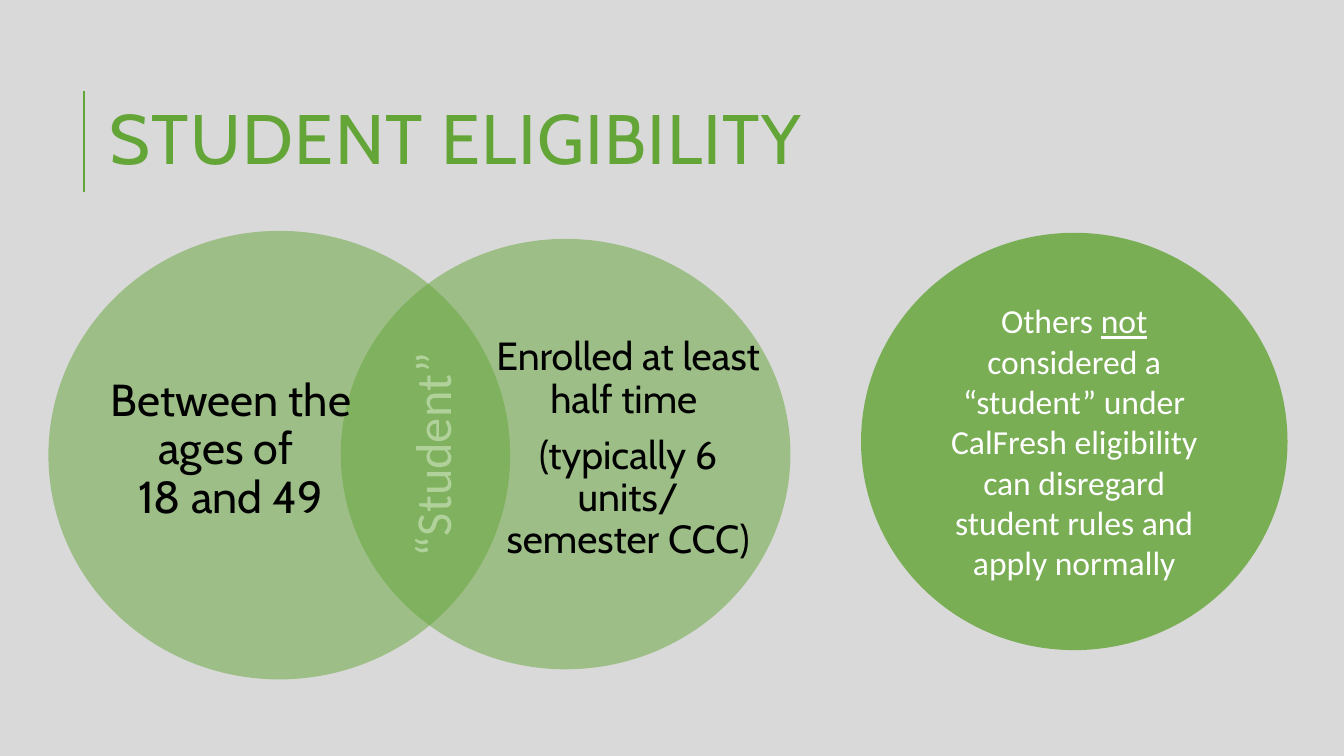
from lxml.etree import SubElement
from pptx import Presentation
from pptx.dml.color import RGBColor
from pptx.enum.shapes import MSO_CONNECTOR, MSO_SHAPE
from pptx.enum.text import MSO_ANCHOR as ANCHOR, PP_ALIGN as ALIGN
from pptx.oxml.ns import qn
from pptx.util import Inches, Pt

GREEN = RGBColor(0x63, 0xA5, 0x37)
GRAY = RGBColor(0xD9, 0xD9, 0xD9)
BLACK = RGBColor(0, 0, 0)
WHITE = RGBColor(0xFF, 0xFF, 0xFF)


class EligibilitySlide:
    heading_font = "Cabin"
    body_font = "Calibri"

    def __init__(self, prs):
        self.s = prs.slides.add_slide(prs.slide_layouts[6])
        fill = self.s.background.fill
        fill.solid()
        fill.fore_color.rgb = GRAY

    def rule(self, x, top, bottom):
        line = self.s.shapes.add_connector(
            MSO_CONNECTOR.STRAIGHT, Inches(x), Inches(bottom), Inches(x), Inches(top))
        line.line.color.rgb = GREEN
        line.line.width = Pt(1.5)
        SubElement(line._element.spPr, qn("a:effectLst"))

    def circle(self, box, opacity):
        sp = self.s.shapes.add_shape(MSO_SHAPE.OVAL, *map(Inches, box))
        sp.shadow.inherit = False
        sp.fill.solid()
        sp.fill.fore_color.rgb = GREEN
        color = sp._element.spPr.find(qn("a:solidFill"))[0]
        SubElement(color, qn("a:alpha"), val=str(opacity * 1000))
        sp.line.fill.background()
        return sp

    def style(self, p, size, font, color, align=ALIGN.CENTER, spacing=None):
        p.alignment = align
        p.line_spacing = spacing
        p.font.size = Pt(size)
        p.font.name = font
        p.font.color.rgb = color

    def text(self, box, paragraphs, size, font, color, align=ALIGN.CENTER,
             anchor=ANCHOR.MIDDLE, spacing=None, after=(), side=0.1):
        sp = self.s.shapes.add_textbox(*map(Inches, box))
        tf = sp.text_frame
        tf.word_wrap = True
        tf.vertical_anchor = anchor
        tf.margin_left = tf.margin_right = Inches(side)
        tf.text = "\n".join(paragraphs)
        for p in tf.paragraphs:
            self.style(p, size, font, color, align, spacing)
        for p, gap in zip(tf.paragraphs, after):
            p.space_after = Pt(gap)
        return sp

    def circle_text(self, box, paragraphs, size, after):
        sp = self.text(box, paragraphs, size, self.heading_font, BLACK,
                       spacing=0.9, after=after, side=0.27)
        sp.text_frame.margin_top = sp.text_frame.margin_bottom = Inches(0.04)
        return sp

    def note(self, box, runs):
        sp = self.circle(box, 81)
        tf = sp.text_frame
        tf.word_wrap = True
        tf.vertical_anchor = ANCHOR.MIDDLE
        p = tf.paragraphs[0]
        for text, underlined in runs:
            r = p.add_run()
            r.text = text
            if underlined:
                r.font.underline = True
        self.style(p, 24, self.body_font, WHITE)

    def title(self, box, text):
        sp = self.text(box, [text], 50, self.heading_font, GREEN,
                       align=ALIGN.LEFT, spacing=0.8)
        r = sp.text_frame.paragraphs[0].runs[0]
        r._r.get_or_add_rPr().set("spc", "100")


def main():
    prs = Presentation()
    prs.slide_width, prs.slide_height = Inches(13.33), Inches(7.5)
    slide = EligibilitySlide(prs)

    slide.rule(0.83, 0.9, 1.9)
    slide.note((8.54, 2.31, 4.23, 4.14), [
        ("Others ", False),
        ("not", True),
        (" considered a “student” under CalFresh eligibility can disregard "
         "student rules and apply normally", False),
    ])

    slide.circle((3.38, 2.37, 4.46, 4.27), 50)
    slide.circle_text(
        (4.65, 2.95, 3.16, 3.02),
        ["Enrolled at least half time ", "(typically 6 units/", "semester CCC)"],
        28, (9.8, 0, 9.8))

    overlap = slide.text((3.11, 4.1, 2.34, 0.71), ["“Student”"], 36,
                         slide.body_font, WHITE, align=ALIGN.LEFT, anchor=ANCHOR.TOP)
    overlap.rotation = 270

    slide.circle((0.48, 2.29, 4.58, 4.45), 50)
    slide.circle_text((0.67, 2.89, 3.24, 3.15),
                      ["Between the ages of \v18 and 49"], 32, (11.2,))

    slide.title((0.99, 0.71, 11.5, 1.45), "STUDENT ELIGIBILITY")
    prs.save("out.pptx")


if __name__ == "__main__":
    main()
